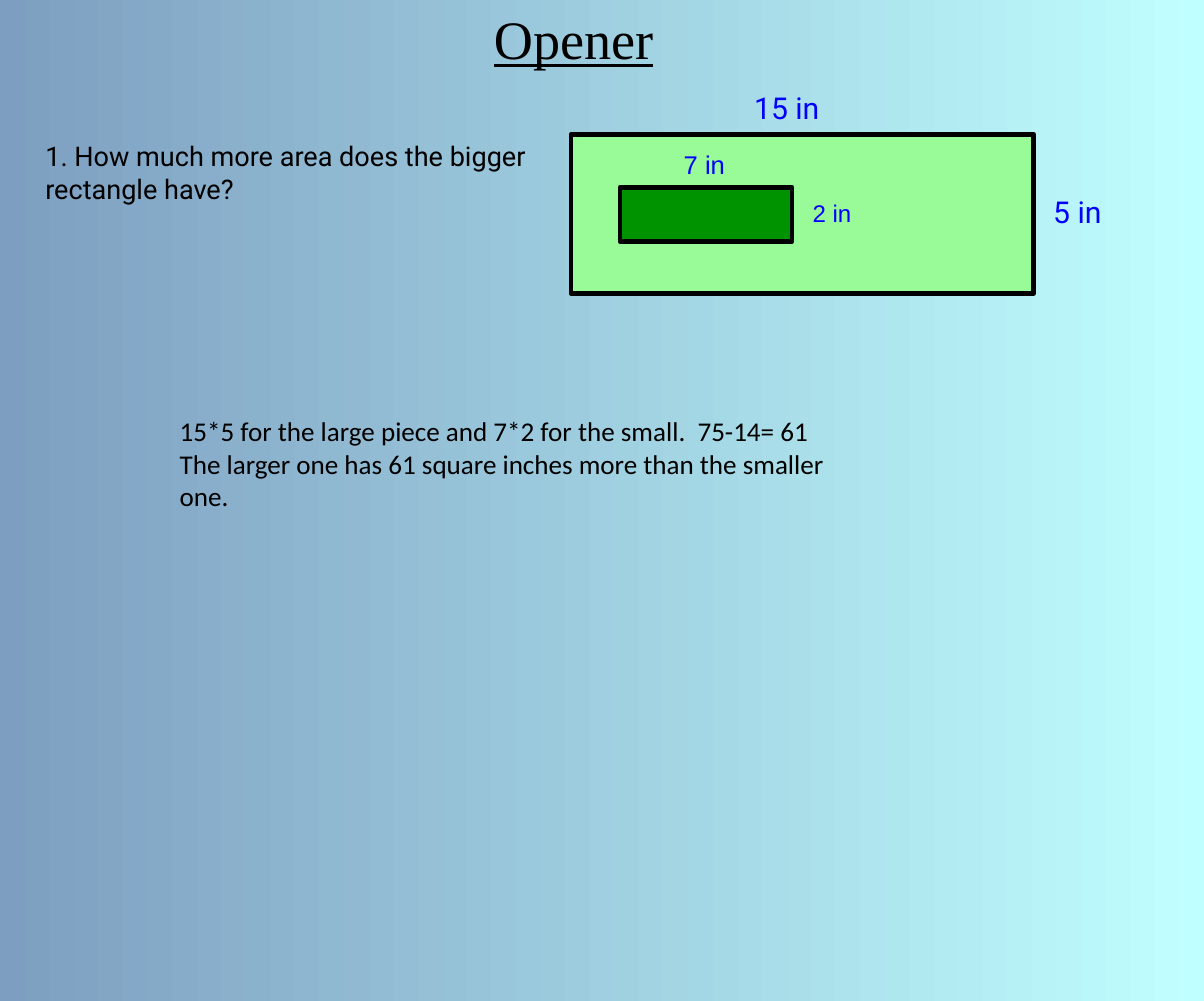
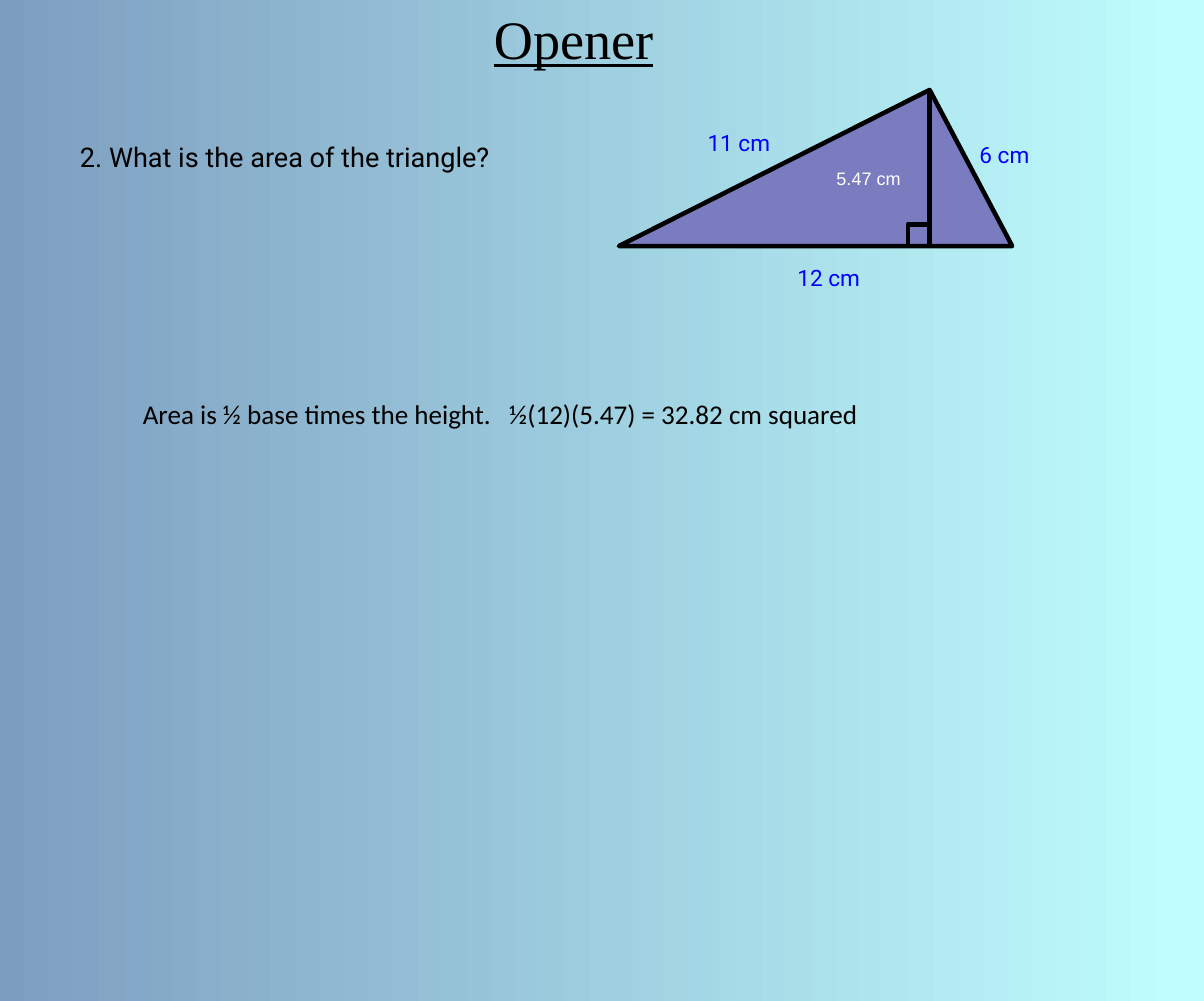
from pptx import Presentation
from pptx import util as u
from pptx.dml.color import RGBColor
from pptx.enum import shapes, text
from pptx.oxml.ns import qn
from lxml import etree

WIDTH, HEIGHT = u.Inches(11.11), u.Inches(9.24)
BLACK, BLUE, WHITE = "000000", "0000FF", "FFFFFF"
SKY = ("7D9EC0", "C0FFFF")
STROKE = 3


def rgb(value):
    return RGBColor.from_string(value)


def place(left, top, width, height):
    return (round(left * WIDTH / 100), round(top * HEIGHT / 100),
            round(width * WIDTH / 100), round(height * HEIGHT / 100))


def paint_background(master):
    fill = master.background.fill
    fill.gradient()
    fill.gradient_angle = 0
    for stop, colour, position in zip(fill.gradient_stops, SKY, (0, 1)):
        stop.color.rgb = rgb(colour)
        stop.position = position


def write(slide, area, lines, size, font, colour=BLACK, underline=None):
    frame = slide.shapes.add_textbox(*place(*area)).text_frame
    frame.word_wrap = True
    frame.auto_size = text.MSO_AUTO_SIZE.SHAPE_TO_FIT_TEXT
    for index, line in enumerate(lines):
        paragraph = frame.add_paragraph() if index else frame.paragraphs[0]
        run = paragraph.add_run()
        run.text = line
        run.font.size = u.Pt(size)
        run.font.name = font
        run.font.underline = underline
        run.font.color.rgb = rgb(colour)


def outline(line):
    line.color.rgb = rgb(BLACK)
    line.width = u.Pt(STROKE)


def figure(slide, kind, area, colour=None):
    shape = slide.shapes.add_shape(kind, *place(*area))
    shape.shadow.inherit = False
    if colour:
        shape.fill.solid()
        shape.fill.fore_color.rgb = rgb(colour)
    else:
        shape.fill.background()
    outline(shape.line)
    return shape


def vertical(slide, x, top, bottom):
    left, start, _, drop = place(x, top, 0, bottom - top)
    connector = slide.shapes.add_connector(
        shapes.MSO_CONNECTOR.STRAIGHT, left, start, left, start + drop)
    outline(connector.line)
    etree.SubElement(connector._element.spPr, qn("a:effectLst"))


def opener(deck, question, question_area, answer, answer_area):
    slide = deck.slides.add_slide(deck.slide_layouts[6])
    write(slide, (40.14, 0, 43.02, 7.68), ["Opener"], 36, "Times New Roman", underline=True)
    write(slide, question_area, [question], 18, "Roboto")
    write(slide, answer_area, answer, 18, "Calibri")
    return slide


def rectangles(slide):
    kind = shapes.MSO_SHAPE.RECTANGLE
    figure(slide, kind, (47.43, 13.42, 38.43, 15.91), "98FB98")
    figure(slide, kind, (51.49, 18.72, 14.31, 5.41), "009300")
    for label, area, size, font in (
            ("5 in", (86.59, 18.83, 6.75, 4.76), 20, "Roboto"),
            ("15 in", (61.75, 8.44, 8.64, 4.76), 20, "Roboto"),
            ("2 in", (66.61, 19.26, 5.76, 4), 16, "Arial"),
            ("7 in", (55.9, 14.39, 5.85, 4.22), 17, "Arial")):
        write(slide, area, [label], size, font, BLUE)


def triangle(slide):
    left, top, width, height = 51.4, 8.98, 32.67, 15.6
    apex = 0.79
    foot, base = left + apex * width, top + height
    corner_width, corner_height = 1.8, 2.16
    shape = figure(slide, shapes.MSO_SHAPE.ISOSCELES_TRIANGLE,
                   (left, top, width, height), "7B7BC0")
    shape.adjustments[0] = apex
    vertical(slide, foot, top, base)
    figure(slide, shapes.MSO_SHAPE.RECTANGLE,
           (foot - corner_width, base - corner_height, corner_width, corner_height))
    for label, area in (
            ("11 cm", (57.88, 12.34, 8.19, 3.79)),
            ("6 cm", (80.47, 13.53, 6.93, 3.79)),
            ("12 cm", (65.35, 25.87, 8.46, 3.79))):
        write(slide, area, [label], 15, "Roboto", BLUE)
    write(slide, (68.59, 16.23, 8.73, 3.25), ["5.47 cm"], 12, "Arial", WHITE)


def main():
    deck = Presentation()
    deck.slide_width, deck.slide_height = WIDTH, HEIGHT
    paint_background(deck.slide_master)
    rectangles(opener(
        deck, "1. How much more area does the bigger rectangle have?",
        (2.88, 13.42, 42.75, 7.68),
        ["15*5 for the large piece and 7*2 for the small.  75-14= 61",
         "The larger one has 61 square inches more than the smaller one."],
        (14.04, 40.91, 56.35, 10.93)))
    triangle(opener(
        deck, "2. What is the area of the triangle?",
        (5.76, 13.53, 36.72, 7.68),
        ["Area is ½ base times the height.   ½(12)(5.47) = 32.82 cm squared"],
        (10.98, 39.18, 65.26, 4.33)))
    deck.save("out.pptx")


if __name__ == "__main__":
    main()
